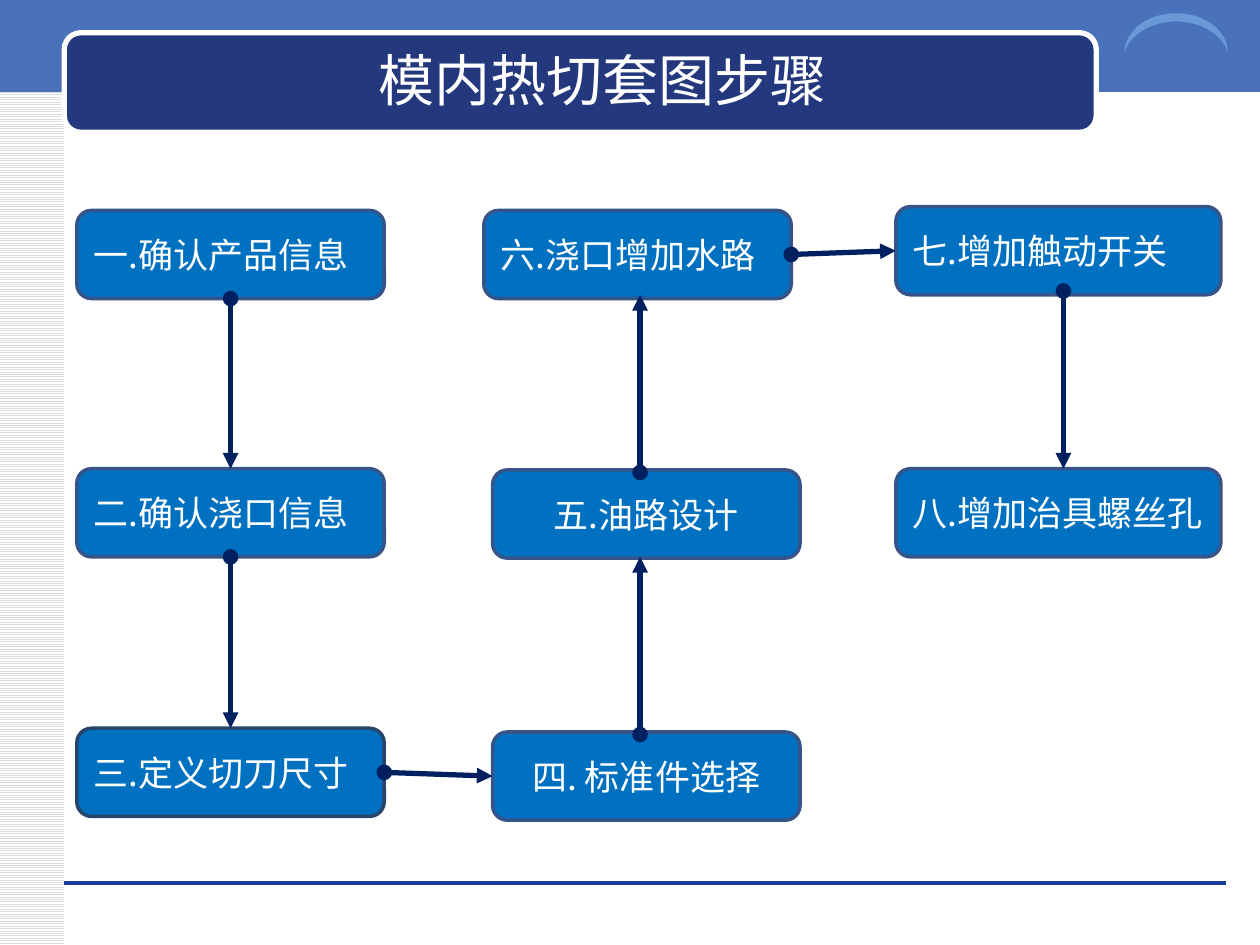
from lxml.etree import SubElement
from pptx import Presentation
from pptx.dml.color import RGBColor
from pptx.enum.dml import MSO_PATTERN
from pptx.enum.shapes import MSO_CONNECTOR, MSO_SHAPE
from pptx.enum.text import MSO_ANCHOR, PP_ALIGN
from pptx.oxml.ns import qn
from pptx.util import Inches, Pt

TITLE = "模内热切套图步骤"
FONT = "Noto Sans CJK SC"
BLUE, EDGE, NAVY, WHITE = "0070C0", "36548A", "002060", "FFFFFF"
BOX_H = 0.7
TOP, LEFT, BOTTOM, RIGHT = range(4)

STEPS = [
    ("一.确认产品信息", 0.61, 1.67, 2.44, EDGE, PP_ALIGN.LEFT),
    ("二.确认浇口信息", 0.61, 3.72, 2.44, EDGE, PP_ALIGN.LEFT),
    ("三.定义切刀尺寸", 0.61, 5.78, 2.44, "27446A", PP_ALIGN.LEFT),
    ("四. 标准件选择", 3.91, 5.81, 2.44, EDGE, PP_ALIGN.CENTER),
    ("五.油路设计", 3.91, 3.73, 2.44, EDGE, PP_ALIGN.CENTER),
    ("六.浇口增加水路", 3.84, 1.67, 2.44, EDGE, PP_ALIGN.LEFT),
    ("七.增加触动开关", 7.11, 1.64, 2.58, EDGE, PP_ALIGN.LEFT),
    ("八.增加治具螺丝孔", 7.11, 3.72, 2.58, EDGE, PP_ALIGN.LEFT),
]
JOINED = [
    (0, BOTTOM, 1, TOP),
    (1, BOTTOM, 2, TOP),
    (2, RIGHT, 3, LEFT),
    (5, RIGHT, 6, LEFT),
]
FREE = [
    (5.08, 5.83, 5.08, 4.42),
    (5.08, 3.75, 5.08, 2.34),
    (8.44, 2.31, 8.44, 3.72),
]


def rgb(value):
    return RGBColor.from_string(value)


def add_shape(kind, x, y, w, h, fill=None, line=None, width=2):
    sp = s.shapes.add_shape(kind, Inches(x), Inches(y), Inches(w), Inches(h))
    sp.shadow.inherit = False
    if fill:
        sp.fill.solid()
        sp.fill.fore_color.rgb = rgb(fill)
    if line:
        sp.line.color.rgb = rgb(line)
        sp.line.width = Pt(width)
    else:
        sp.line.fill.background()
    return sp


def add_line(x1, y1, x2, y2, color, width):
    c = s.shapes.add_connector(MSO_CONNECTOR.STRAIGHT, *map(Inches, (x1, y1, x2, y2)))
    c.line.color.rgb = rgb(color)
    c.line.width = Pt(width)
    SubElement(c._element.spPr, qn("a:effectLst"))
    return c


def add_arrow(x1=0, y1=0, x2=0, y2=0):
    c = add_line(x1, y1, x2, y2, NAVY, 3)
    ln = c.line._get_or_add_ln()
    SubElement(ln, qn("a:headEnd"), type="oval")
    SubElement(ln, qn("a:tailEnd"), type="triangle")
    return c


def write(tf, text, size, font, align):
    p = tf.paragraphs[0]
    p.alignment = align
    r = p.add_run()
    r.text = text
    r.font.size = Pt(size)
    r.font.name = font
    r.font.color.rgb = rgb(WHITE)
    SubElement(r.font._element, qn("a:ea"), typeface=FONT)


prs = Presentation()
prs.slide_width, prs.slide_height = Inches(10), Inches(7.5)
s = prs.slides.add_slide(prs.slide_layouts[5])

stripes = add_shape(MSO_SHAPE.RECTANGLE, 0, 0, 0.51, 7.5)
stripes.fill.patterned()
stripes.fill.pattern = MSO_PATTERN.LIGHT_HORIZONTAL
stripes.fill.fore_color.rgb = rgb("DDDDDD")
stripes.fill.back_color.rgb = rgb(WHITE)
add_shape(MSO_SHAPE.RECTANGLE, 0, -0.03, 10, 0.76, "4972BB")
add_line(0.51, 7.01, 9.73, 7.01, "1A3D97", 0)
add_shape(MSO_SHAPE.ROUNDED_RECTANGLE, 0.51, 0.26, 8.19, 0.79, "23387D", WHITE, 3)
moon = add_shape(MSO_SHAPE.MOON, 9.18, -0.15, 0.31, 0.82, "6A99D8")
moon.rotation = 90
moon.adjustments[0] = 0.21

title = s.shapes.title
title.left, title.top, title.width, title.height = map(Inches, (2.89, 0.31, 3.79, 0.64))
title.text_frame.word_wrap = False
title.text_frame.vertical_anchor = MSO_ANCHOR.TOP
write(title.text_frame, TITLE, 32, "Arial", PP_ALIGN.CENTER)
s.shapes._spTree.append(title._element)

boxes = []
for text, x, y, w, edge, align in STEPS:
    sp = add_shape(MSO_SHAPE.ROUNDED_RECTANGLE, x, y, w, BOX_H, BLUE, edge)
    tf = sp.text_frame
    tf.word_wrap = True
    tf.vertical_anchor = MSO_ANCHOR.MIDDLE
    write(tf, text, 20, FONT, align)
    boxes.append(sp)

for start, side, end, end_side in JOINED:
    c = add_arrow()
    c.begin_connect(boxes[start], side)
    c.end_connect(boxes[end], end_side)
for points in FREE:
    add_arrow(*points)

prs.save("out.pptx")
